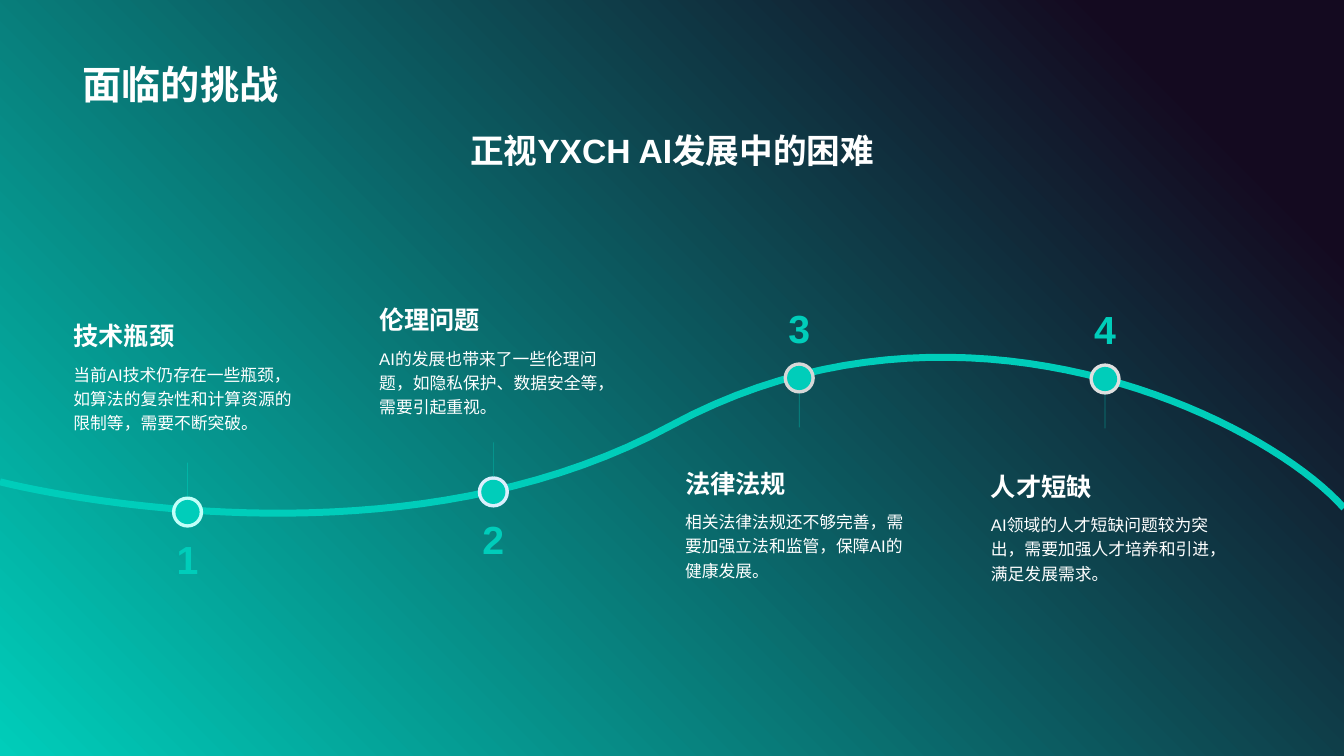
"""Build the challenges slide: four numbered obstacles along a wavy path."""
from lxml.etree import SubElement
from pptx import Presentation
from pptx.dml.color import RGBColor
from pptx.enum.shapes import MSO_CONNECTOR, MSO_SHAPE
from pptx.enum.text import MSO_ANCHOR, MSO_AUTO_SIZE, PP_ALIGN
from pptx.oxml.ns import qn
from pptx.util import Inches, Pt

TITLE = "面临的挑战"
SUBTITLE = "正视YXCH AI发展中的困难"
CHALLENGES = [
    {"heading": "技术瓶颈", "ring": "C2FFF9", "node_y": 5.08, "text_y": 2.78, "above": True,
     "body": "当前AI技术仍存在一些瓶颈，如算法的复杂性和计算资源的限制等，需要不断突破。"},
    {"heading": "伦理问题", "ring": "DBEFFD", "node_y": 4.88, "text_y": 2.62, "above": True,
     "body": "AI的发展也带来了一些伦理问题，如隐私保护、数据安全等，需要引起重视。"},
    {"heading": "法律法规", "ring": "D7D7D7", "node_y": 3.75, "text_y": 4.24, "above": False,
     "body": "相关法律法规还不够完善，需要加强立法和监管，保障AI的健康发展。"},
    {"heading": "人才短缺", "ring": "DFDFDF", "node_y": 3.76, "text_y": 4.27, "above": False,
     "body": "AI领域的人才短缺问题较为突出，需要加强人才培养和引进，满足发展需求。"},
]
COLORS = {"teal": "00CDBA", "night": "140A20", "white": "FFFFFF"}
FONT = "Arial"
WIDTH, HEIGHT = 13.33, 7.5
MARGIN = 0.72
FIRST_X, LAST_X = 1.86, 10.96
PITCH = (LAST_X - FIRST_X) / (len(CHALLENGES) - 1)
TEXT_WIDTH, HEADING_HEIGHT, BODY_HEIGHT = 2.46, 0.75, 1
NUMBER_WIDTH, NUMBER_HEIGHT = 0.47, 0.57
RING_SIZE, DOT_SIZE = 0.31, 0.24
STEM_START, STEM_END = 0.15, 0.49
CURVES = [
    [(0, 4.78), (0, 4.78), (3.82, 5.77), (6.66, 4.22)],
    [(6.66, 4.22), (9.51, 2.68), (12.52, 4.13), (13.33, 5.04)],
]
CURVE_STEPS = 40


def color(value):
    return RGBColor.from_string(value)


def place(shape, left, top, width, height):
    shape.left, shape.top = Inches(left), Inches(top)
    shape.width, shape.height = Inches(width), Inches(height)


def write(shape, text, size=12, fill=COLORS["white"], bold=False, align=PP_ALIGN.LEFT,
          anchor=MSO_ANCHOR.TOP, spacing=1.0):
    frame = shape.text_frame
    frame.word_wrap = True
    frame.auto_size = MSO_AUTO_SIZE.NONE
    frame.vertical_anchor = anchor
    paragraph = frame.paragraphs[0]
    paragraph.alignment = align
    paragraph.line_spacing = spacing
    run = paragraph.add_run()
    run.text = text
    run.font.name = FONT
    run.font.size = Pt(size)
    run.font.bold = bold
    run.font.color.rgb = color(fill)


def add_text(slide, box, text, **style):
    shape = slide.shapes.add_textbox(*map(Inches, box))
    write(shape, text, **style)


def add_disc(slide, x, y, size, fill):
    box = (x - size / 2, y - size / 2, size, size)
    disc = slide.shapes.add_shape(MSO_SHAPE.OVAL, *map(Inches, box))
    disc.shadow.inherit = False
    disc.fill.solid()
    disc.fill.fore_color.rgb = color(fill)
    disc.line.fill.background()


def add_stem(slide, x, start, end):
    stem = slide.shapes.add_connector(MSO_CONNECTOR.STRAIGHT, *map(Inches, (x, start, x, end)))
    stem.line.width = Pt(0.5)
    stem.line.color.rgb = color(COLORS["teal"])
    tint = stem.line.fill._xPr.find(".//" + qn("a:srgbClr"))
    SubElement(tint, qn("a:alpha"), val="50000")
    SubElement(stem._element.spPr, qn("a:effectLst"))


def bezier_point(points, t):
    weights = ((1 - t) ** 3, 3 * t * (1 - t) ** 2, 3 * t * t * (1 - t), t ** 3)
    return tuple(Inches(sum(w * p[axis] for w, p in zip(weights, points))) for axis in (0, 1))


def add_path(slide):
    points = [bezier_point(curve, step / CURVE_STEPS)
              for curve in CURVES for step in range(1, CURVE_STEPS + 1)]
    builder = slide.shapes.build_freeform(*bezier_point(CURVES[0], 0))
    builder.add_line_segments(points, close=False)
    path = builder.convert_to_shape()
    path.shadow.inherit = False
    path.fill.background()
    path.line.width = Pt(5)
    path.line.color.rgb = color(COLORS["teal"])


def add_background(slide):
    fill = slide.background.fill
    fill.gradient()
    fill.gradient_angle = 45
    for stop, position, name in zip(fill.gradient_stops, (0, 0.88), ("teal", "night")):
        stop.position = position
        stop.color.rgb = color(COLORS[name])


def add_challenge(slide, index, challenge):
    x, y, text_y = FIRST_X + index * PITCH, challenge["node_y"], challenge["text_y"]
    above = challenge["above"]
    direction = -1 if above else 1
    text_x = x - TEXT_WIDTH / 2
    number_y = y + 0.18 if above else y - 0.78
    add_disc(slide, x, y, RING_SIZE, challenge["ring"])
    add_disc(slide, x, y, DOT_SIZE, COLORS["teal"])
    add_stem(slide, x, y + direction * STEM_START, y + direction * STEM_END)
    add_text(slide, (x - NUMBER_WIDTH / 2, number_y, NUMBER_WIDTH, NUMBER_HEIGHT), str(index + 1),
             size=28, fill=COLORS["teal"], bold=True, align=PP_ALIGN.CENTER)
    add_text(slide, (text_x, text_y, TEXT_WIDTH, HEADING_HEIGHT), challenge["heading"],
             size=18, bold=True, anchor=MSO_ANCHOR.BOTTOM)
    add_text(slide, (text_x, text_y + HEADING_HEIGHT, TEXT_WIDTH, BODY_HEIGHT),
             challenge["body"], spacing=1.2)


def main():
    presentation = Presentation()
    presentation.slide_width, presentation.slide_height = Inches(WIDTH), Inches(HEIGHT)
    slide = presentation.slides.add_slide(presentation.slide_layouts.get_by_name("Title Only"))
    add_background(slide)
    content_width = WIDTH - 2 * MARGIN
    title = slide.shapes.title
    place(title, MARGIN, 0.14, content_width, 0.98)
    write(title, TITLE, size=28, bold=True, anchor=MSO_ANCHOR.BOTTOM)
    add_path(slide)
    add_text(slide, (MARGIN, 1.24, content_width, 0.5), SUBTITLE, size=24, bold=True,
             align=PP_ALIGN.CENTER, anchor=MSO_ANCHOR.MIDDLE)
    for index, challenge in enumerate(CHALLENGES):
        add_challenge(slide, index, challenge)
    presentation.save("out.pptx")


if __name__ == "__main__":
    main()
